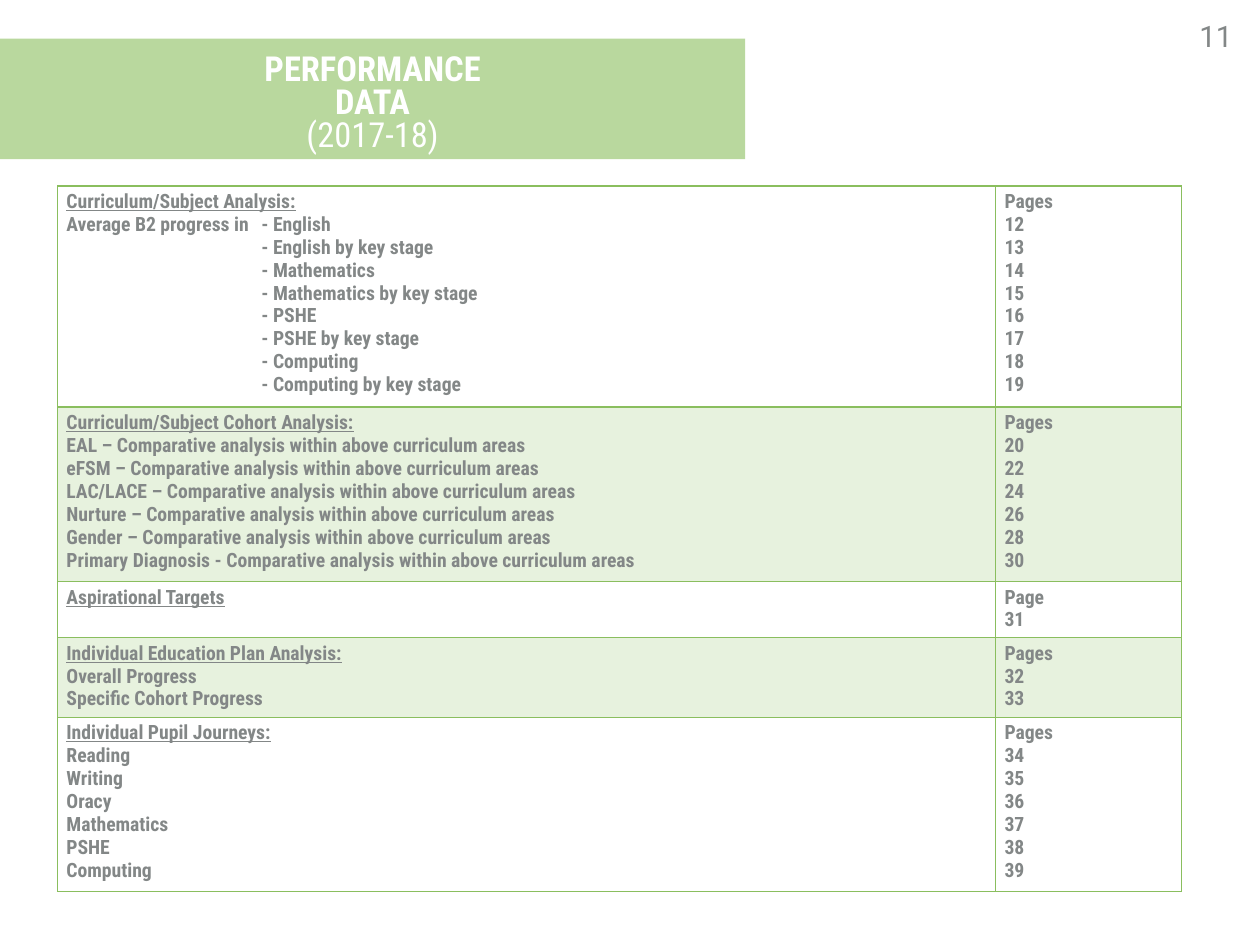
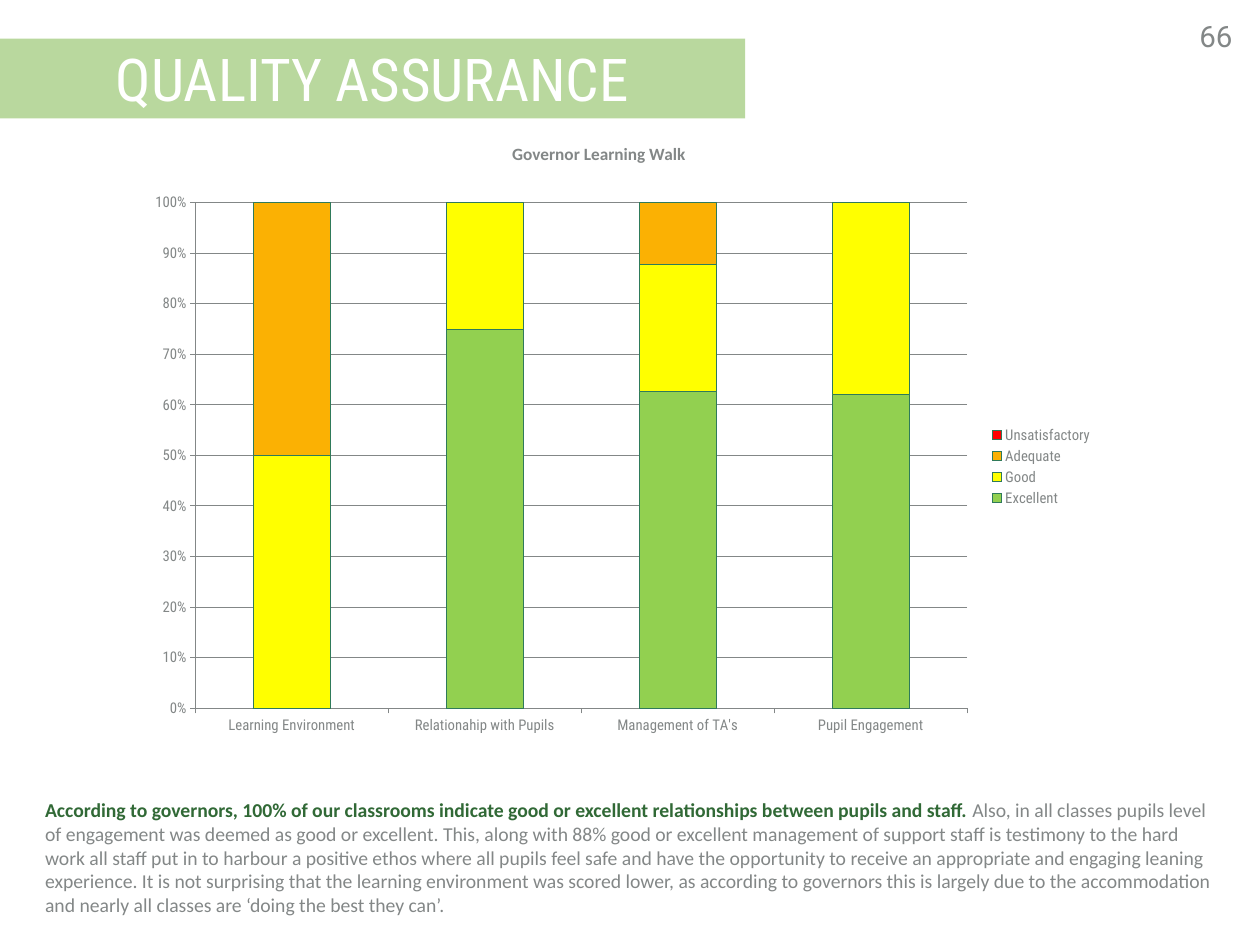
from lxml.etree import SubElement
from pptx import Presentation
from pptx.chart.data import CategoryChartData
from pptx.dml.color import RGBColor
from pptx.enum.chart import XL_CHART_TYPE, XL_LEGEND_POSITION, XL_TICK_MARK
from pptx.enum.shapes import MSO_SHAPE
from pptx.enum.text import MSO_ANCHOR, PP_ALIGN
from pptx.oxml import parse_xml
from pptx.oxml.ns import nsdecls, qn
from pptx.util import Emu, Inches, Pt

WIDTH, HEIGHT = Inches(14.22), Inches(10.67)
BAND, RULE, GREY, WHITE, DARK_GREEN = "B9D89E", "8ABE5E", "838787", "FFFFFF", "316936"
BAR_EDGE = "2F7A5A"
CONDENSED, ROBOTO, CALIBRI = "Roboto Condensed", "Roboto", "Calibri"
INSET = Inches(0.06)
SUBJECT_INDENT = Inches(2.2)

CONTENTS = [
    (["Curriculum/Subject Analysis:", "Average B2 progress in\t- English",
      "- English by key stage", "- Mathematics", "- Mathematics by key stage",
      "- PSHE", "- PSHE by key stage", "- Computing", "- Computing by key stage"],
     ["Pages", *range(12, 20)]),
    (["Curriculum/Subject Cohort Analysis:",
      *(f"{cohort} Comparative analysis within above curriculum areas" for cohort in
        ("EAL –", "eFSM –", "LAC/LACE –", "Nurture –", "Gender –", "Primary Diagnosis -"))],
     ["Pages", *range(20, 31, 2)]),
    (["Aspirational Targets"], ["Page", 31]),
    (["Individual Education Plan Analysis:", "Overall Progress", "Specific Cohort Progress"],
     ["Pages", 32, 33]),
    (["Individual Pupil Journeys:", "Reading", "Writing", "Oracy", "Mathematics", "PSHE",
      "Computing"],
     ["Pages", *range(34, 40)]),
]

WALK_AREAS = ["Learning Environment", "Relationahip with Pupils", "Management of TA's",
              "Pupil Engagement"]
WALK_RATINGS = [
    ("Excellent", "92D050", (0, 75, 62, 62)),
    ("Good", "FFFF00", (50, 25, 25, 38)),
    ("Adequate", "FBB103", (50, 0, 12, 0)),
    ("Unsatisfactory", "FF0000", (0, 0, 0, 0)),
]

FINDING = ("According to governors, 100% of our classrooms indicate good or excellent "
           "relationships between pupils and staff. ")
EXPLANATION = (
    "Also, in all classes pupils level of engagement was deemed as good or excellent. This, "
    "along with 88% good or excellent management of support staff is testimony to the hard "
    "work all staff put in to harbour a positive ethos where all pupils feel safe and have the "
    "opportunity to receive an appropriate and engaging leaning experience. It is not "
    "surprising that the learning environment was scored lower, as according to governors this "
    "is largely due to the accommodation and nearly all classes are ‘doing the best they can’.")


def rgb(value):
    return RGBColor.from_string(value)


def area(left, top, width, height):
    """Turn percentages of the slide into left, top, width, height."""
    return [Emu(int(share * side / 100)) for share, side in
            zip((left, top, width, height), (WIDTH, HEIGHT) * 2)]


def style(font, size, name, color, bold=False):
    font.size, font.name, font.bold = Pt(size), name, bold
    font.color.rgb = rgb(color)


def prepare_frame(frame, anchor, wrap):
    frame.margin_left = frame.margin_right = frame.margin_top = frame.margin_bottom = INSET
    frame.vertical_anchor, frame.word_wrap = anchor, wrap


def add_band(slide, lines, size, height, bold_lines=0):
    band = slide.shapes.add_shape(MSO_SHAPE.RECTANGLE, *area(0, 4.1, 59.14, height))
    band.shadow.inherit = False
    band.fill.solid()
    band.fill.fore_color.rgb = rgb(BAND)
    band.line.fill.background()
    prepare_frame(band.text_frame, MSO_ANCHOR.BOTTOM, True)
    band.text_frame.text = "\n".join(lines)
    for index, paragraph in enumerate(band.text_frame.paragraphs):
        paragraph.alignment, paragraph.line_spacing = PP_ALIGN.CENTER, 0.8
        style(paragraph.runs[0].font, size, CONDENSED, WHITE, index < bold_lines)


def add_text(slide, place, pieces, size, name, anchor=MSO_ANCHOR.MIDDLE, wrap=True):
    """Add one paragraph made of (text, colour, bold) pieces and return it."""
    frame = slide.shapes.add_textbox(*place).text_frame
    prepare_frame(frame, anchor, wrap)
    paragraph = frame.paragraphs[0]
    for text, color, bold in pieces:
        run = paragraph.add_run()
        run.text = text
        style(run.font, size, name, color, bold)
    return paragraph


def add_page_number(slide, number):
    paragraph = add_text(slide, area(90.24, 2.06, 8, 4.69), [(str(number), GREY, False)],
                         24, ROBOTO, MSO_ANCHOR.TOP)
    paragraph.alignment, paragraph.line_spacing = PP_ALIGN.RIGHT, 0.8


def indent_subject(paragraph):
    """Line up the subjects that follow 'Average B2 progress in'."""
    properties = paragraph._p.get_or_add_pPr()
    if paragraph.text.startswith("- "):
        properties.set("marL", str(SUBJECT_INDENT))
    elif "\t" in paragraph.text:
        stops = SubElement(properties, qn("a:tabLst"))
        SubElement(stops, qn("a:tab"), pos=str(SUBJECT_INDENT), algn="l")


def rule_cell(cell, widths):
    properties = cell._tc.get_or_add_tcPr()
    for index, (side, width) in enumerate(widths.items()):
        properties.insert(index, parse_xml(
            f'<a:ln{side} {nsdecls("a")} w="{Pt(width)}"><a:solidFill>'
            f'<a:srgbClr val="{RULE}"/></a:solidFill></a:ln{side}>'))


def fill_cell(cell, tinted):
    if not tinted:
        cell.fill.background()
        return
    cell.fill.solid()
    cell.fill.fore_color.rgb = rgb(RULE)
    color = cell._tc.tcPr.find(qn("a:solidFill")).find(qn("a:srgbClr"))
    SubElement(color, qn("a:alpha"), val="20000")


def write_cell(cell, lines, underline_heading):
    cell.text_frame.text = "\n".join(map(str, lines))
    for index, paragraph in enumerate(cell.text_frame.paragraphs):
        indent_subject(paragraph)
        for run in paragraph.runs:
            style(run.font, 16, CONDENSED, GREY, True)
            run.font.underline = underline_heading and index == 0


def add_contents_table(slide):
    left, top, width, height = area(4.57, 19.68, 89.17, 72.3)
    table = slide.shapes.add_table(len(CONTENTS), 2, left, top, width, height).table
    table.first_row = table.horz_banding = False
    table.columns[0].width = int(width * 0.835)
    table.columns[1].width = width - table.columns[0].width
    for row, entry in enumerate(CONTENTS):
        table.rows[row].height = Inches(0.1 + 0.26 * max(map(len, entry)))
        for column, lines in enumerate(entry):
            cell = table.cell(row, column)
            write_cell(cell, lines, column == 0)
            fill_cell(cell, row % 2 == 1)
            rule_cell(cell, {"L": 1, "R": 1, "T": 2 if row == 1 else 1,
                             "B": 2 if row == 0 else 1})


def set_plot_area(chart, **shares):
    plot_area = chart._chartSpace.chart.plotArea
    for layout in plot_area.findall(qn("c:layout")):
        plot_area.remove(layout)
    sizes = "".join(f'<c:{key} val="{value}"/>' for key, value in shares.items())
    plot_area.insert(0, parse_xml(
        f'<c:layout {nsdecls("c")}><c:manualLayout><c:layoutTarget val="inner"/>'
        f'<c:xMode val="edge"/><c:yMode val="edge"/>{sizes}</c:manualLayout></c:layout>'))


def add_ratings_chart(slide):
    data = CategoryChartData()
    data.categories = WALK_AREAS
    for name, _, values in WALK_RATINGS:
        data.add_series(name, values)
    chart = slide.shapes.add_chart(XL_CHART_TYPE.COLUMN_STACKED_100,
                                   *area(10.9, 19.68, 76.58, 59.42), data).chart
    chart.has_title = False
    style(chart.font, 12, CONDENSED, GREY)
    chart.has_legend = True
    chart.legend.position = XL_LEGEND_POSITION.RIGHT
    chart.legend.include_in_layout = False

    plot = chart.plots[0]
    plot.gap_width, plot.overlap, plot.vary_by_categories = 150, 100, False
    for series, (_, color, _) in zip(plot.series, WALK_RATINGS):
        series.format.fill.solid()
        series.format.fill.fore_color.rgb = rgb(color)
        series.format.line.color.rgb = rgb(BAR_EDGE)
        series.format.line.width = Pt(0.75)

    percent = chart.value_axis
    percent.minimum_scale, percent.maximum_scale, percent.major_unit = 0, 1, 0.1
    percent.tick_labels.number_format = "0%"
    percent.tick_labels.number_format_is_linked = False
    percent.has_major_gridlines = True
    for axis in (percent, chart.category_axis):
        axis.major_tick_mark = XL_TICK_MARK.OUTSIDE
    for line in (percent.major_gridlines.format.line, percent.format.line,
                 chart.category_axis.format.line):
        line.color.rgb = rgb(GREY)
        line.width = Pt(0.75)
    set_plot_area(chart, x=0.06, y=0.03, w=0.8, h=0.9)


def add_slide(deck, number, title, size, band_height, bold_lines=0):
    slide = deck.slides.add_slide(deck.slide_layouts[6])
    add_band(slide, title, size, band_height, bold_lines)
    add_page_number(slide, number)
    return slide


def main():
    deck = Presentation()
    deck.slide_width, deck.slide_height = WIDTH, HEIGHT

    performance = add_slide(deck, 11, ["PERFORMANCE", "DATA", "(2017-18)"], 28, 12.75, 2)
    add_contents_table(performance)

    quality = add_slide(deck, 66, ["QUALITY ASSURANCE"], 48, 8.44)
    add_text(quality, area(40.23, 14.62, 16.81, 3.28),
             [("Governor Learning Walk", GREY, True)], 14, CALIBRI, wrap=False)
    add_text(quality, area(3.16, 83.88, 93.6, 13.68),
             [(FINDING, DARK_GREEN, True), (EXPLANATION, GREY, False)], 16, CALIBRI)
    add_ratings_chart(quality)

    deck.save("out.pptx")


if __name__ == "__main__":
    main()
